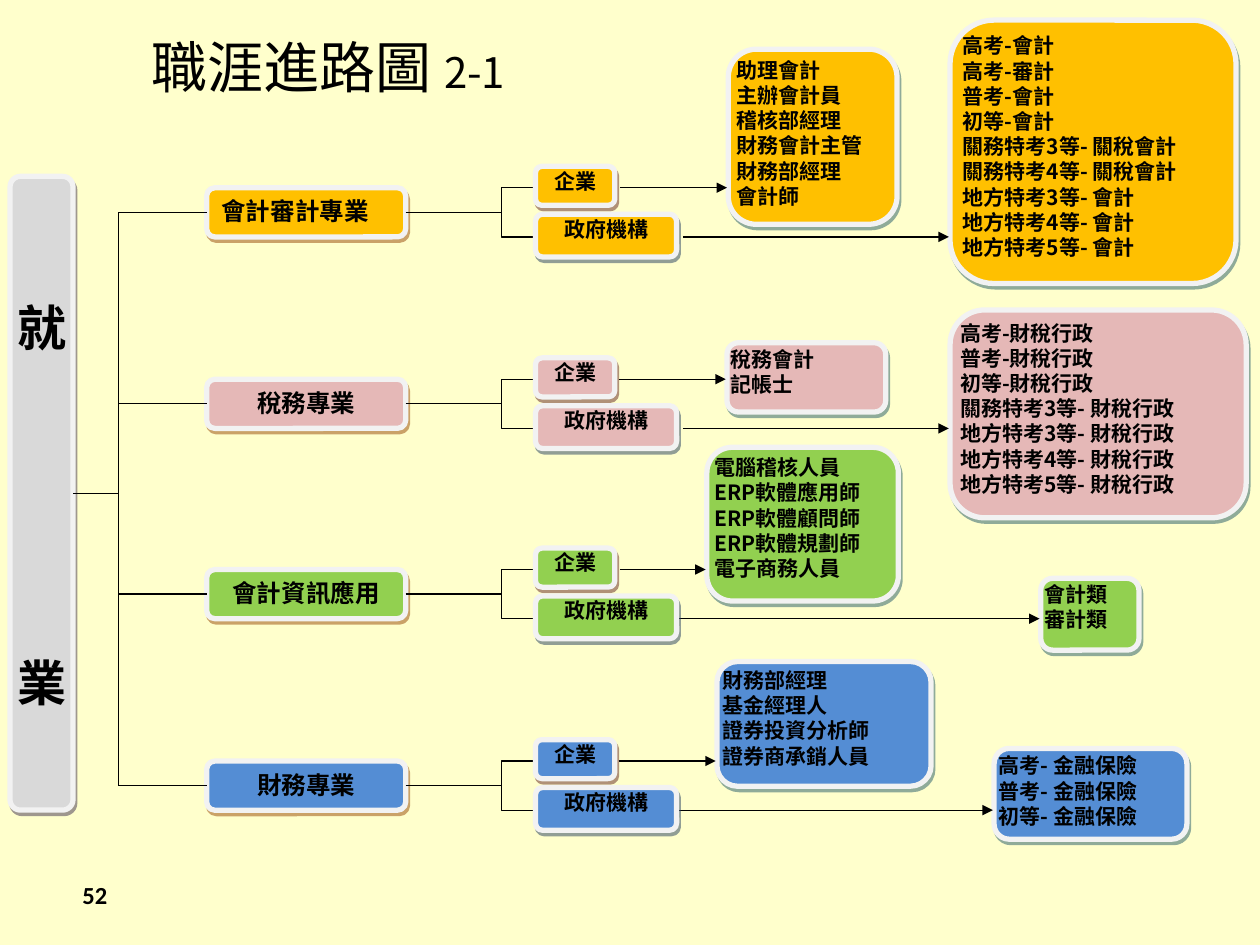
from dataclasses import dataclass

from lxml import etree
from pptx import Presentation
from pptx.dml.color import RGBColor
from pptx.enum.shapes import MSO_CONNECTOR, MSO_SHAPE
from pptx.enum.text import MSO_ANCHOR, PP_ALIGN
from pptx.oxml.ns import qn
from pptx.util import Pt

PX = 9144  # 100 px to the inch
ROUNDED = MSO_SHAPE.ROUNDED_RECTANGLE
STRAIGHT, ELBOW = MSO_CONNECTOR.STRAIGHT, MSO_CONNECTOR.ELBOW
LEFT, CENTER, RIGHT = PP_ALIGN.LEFT, PP_ALIGN.CENTER, PP_ALIGN.RIGHT
TOP, MIDDLE = MSO_ANCHOR.TOP, MSO_ANCHOR.MIDDLE
LEFT_SIDE, RIGHT_SIDE = 1, 3


@dataclass(frozen=True)
class Theme:
    font: str = "Noto Sans CJK SC"
    number_font: str = "Calibri"
    background: str = "FFFFCC"
    ink: str = "000000"
    border: str = "F2F2F2"
    root: str = "D9D9D9"
    gold: str = "FFC000"
    pink: str = "E5B8B7"
    green: str = "92D050"
    blue: str = "548DD4"
    root_shadow: str = "3F3151"
    field_shadow: str = "974706"
    company_shadow: str = "622423"
    agency_shadow: str = "243F60"
    jobs_shadow: str = "205867"
    title_size: int = 32
    part_size: int = 24
    root_size: int = 28
    field_size: int = 14
    body_size: int = 12
    line_height: float = 1.2


THEME = Theme()
PITCH = 455 / 3
FIRST_TRACK = (164, 149)
ROOT_BOX = (8, 140, 50, 503)
SPINE_X = 94

# field, alignment, fill, then (arrow start, box, lines) for company and agency
TRACKS = [
    ("會計審計專業", LEFT, THEME.gold,
     (492, (578, 39, 134, 139),
      ["助理會計", "主辦會計員", "稽核部經理", "財務會計主管", "財務部經理", "會計師"]),
     (542, (754, 16, 227, 209),
      ["高考-會計", "高考-審計", "普考-會計", "初等-會計",
       "關務特考3等- 關稅會計", "關務特考4等- 關稅會計",
       "地方特考3等- 會計", "地方特考4等- 會計", "地方特考5等- 會計"])),
    ("稅務專業", CENTER, THEME.pink,
     (491, (577, 272, 126, 55), ["稅務會計", "記帳士"]),
     (542, (754, 246, 235, 165),
      ["高考-財稅行政", "普考-財稅行政", "初等-財稅行政", "關務特考3等- 財稅行政",
       "地方特考3等- 財稅行政", "地方特考4等- 財稅行政", "地方特考5等- 財稅行政"])),
    ("會計資訊應用", CENTER, THEME.green,
     (492, (561, 355, 152, 122),
      ["電腦稽核人員", "ERP軟體應用師", "ERP軟體顧問師", "ERP軟體規劃師", "電子商務人員"]),
     (539, (826, 459, 78, 57), ["會計類", "審計類"])),
    ("財務專業", CENTER, THEME.blue,
     (491, (569, 525, 170, 99),
      ["財務部經理", "基金經理人", "證券投資分析師", "證券商承銷人員"]),
     (539, (789, 594, 153, 72), ["高考- 金融保險", "普考- 金融保險", "初等- 金融保險"])),
]


def emu(*lengths):
    return [round(length * PX) for length in lengths]


def format_paragraph(paragraph, size, align, bold=True, name=THEME.font):
    paragraph.alignment = align
    paragraph.line_spacing = Pt(size * THEME.line_height)
    font = paragraph.font
    font.name, font.size, font.bold = name, Pt(size), bold
    font.color.rgb = RGBColor.from_string(THEME.ink)
    east_asian = etree.Element(qn("a:ea"), typeface=name)
    font._element.find(qn("a:latin")).addnext(east_asian)


def write_lines(frame, lines, size, align, inset=(0, 0), anchor=TOP):
    """Fill a text frame; inset is (sides, top and bottom) in px."""
    frame.word_wrap = True
    frame.vertical_anchor = anchor
    frame.margin_left = frame.margin_right = inset[0] * PX
    frame.margin_top = frame.margin_bottom = inset[1] * PX
    for index, line in enumerate(lines):
        paragraph = frame.add_paragraph() if index else frame.paragraphs[0]
        paragraph.text = line
        format_paragraph(paragraph, size, align)


def cast_shadow(shape, color):
    shape.shadow.inherit = False
    effects = shape._element.spPr.find(qn("a:effectLst"))
    shadow = etree.SubElement(effects, qn("a:outerShdw"), blurRad="0", dist="28000",
                              dir="3800000", algn="ctr", rotWithShape="0")
    tint = etree.SubElement(shadow, qn("a:srgbClr"), val=color)
    etree.SubElement(tint, qn("a:alpha"), val="50000")


def add_card(slide, box, fill, shadow, lines, size=THEME.body_size, align=LEFT, inset=(0, 0)):
    card = slide.shapes.add_shape(ROUNDED, *emu(*box))
    card.fill.solid()
    card.fill.fore_color.rgb = RGBColor.from_string(fill)
    card.line.color.rgb = RGBColor.from_string(THEME.border)
    card.line.width = Pt(3)
    cast_shadow(card, shadow)
    write_lines(card.text_frame, lines, size, align, inset)
    return card


def add_line(slide, start, end, kind=STRAIGHT, arrow=False):
    line = slide.shapes.add_connector(kind, *emu(*start, *end))
    line.line.color.rgb = RGBColor.from_string(THEME.ink)
    line.line.width = Pt(0.75)
    if arrow:
        etree.SubElement(line.line._get_or_add_ln(), qn("a:tailEnd"), type="triangle")
    etree.SubElement(line._element.spPr, qn("a:effectLst"))
    return line


def add_title(slide, box):
    title = slide.shapes.title
    title.left, title.top, title.width, title.height = emu(*box)
    frame = title.text_frame
    frame.vertical_anchor = MIDDLE
    paragraph = frame.paragraphs[0]
    for text, size in (("職涯進路圖 ", THEME.title_size), ("2-1", THEME.part_size)):
        run = paragraph.add_run()
        run.text = text
        run.font.size = Pt(size)
    format_paragraph(paragraph, THEME.title_size, CENTER, bold=False)


def add_page_number(slide, box):
    number = slide.shapes.add_textbox(*emu(*box))
    write_lines(number.text_frame, [], THEME.field_size, RIGHT, (10, 5), MIDDLE)
    paragraph = number.text_frame.paragraphs[0]
    paragraph.text = "52"
    format_paragraph(paragraph, THEME.field_size, RIGHT, name=THEME.number_font)


def add_root(slide, box):
    """Place the employment bar and the spine that feeds every track."""
    root = add_card(slide, box, THEME.root, THEME.root_shadow, ["就", "業"],
                    THEME.root_size, CENTER)
    root.text_frame.margin_top = 94 * PX
    root.text_frame.paragraphs[1].space_before = Pt(169)
    x, y, width, height = box
    middle = y + height / 2
    trunk = add_line(slide, (x + width, middle), (SPINE_X, middle))
    trunk.begin_connect(root, RIGHT_SIDE)
    spine_top = FIRST_TRACK[1] + 20
    add_line(slide, (SPINE_X, spine_top), (SPINE_X, spine_top + 3 * PITCH))


def add_track(slide, origin, track):
    """Place one field, its two kinds of employer and the posts each leads to."""
    name, align, fill, company, agency = track
    x, y = origin
    middle = y + 19.5
    fork_x, employer_x = x + 207, x + 261
    field = add_card(slide, (x, y, 158, 39), fill, THEME.field_shadow, [name],
                     THEME.field_size, align, (10, 5))
    add_line(slide, (SPINE_X, middle), (x, middle)).end_connect(field, LEFT_SIDE)
    add_line(slide, (x + 158, middle), (fork_x, middle)).begin_connect(field, RIGHT_SIDE)

    employers = (
        ("企業", y, (-17, 63, 31), THEME.company_shadow, company),
        ("政府機構", y + 39, (21, 112, 34), THEME.agency_shadow, agency),
    )
    for employer, line_y, (drop, width, height), shadow, posts in employers:
        arrow_x, posts_box, lines = posts
        add_card(slide, posts_box, fill, THEME.jobs_shadow, lines)
        add_line(slide, (fork_x, middle), (employer_x, line_y), ELBOW)
        add_line(slide, (arrow_x, line_y), (posts_box[0] - 1, line_y), arrow=True)
        add_card(slide, (employer_x, y + drop, width, height), fill, shadow,
                 [employer], align=CENTER)


def main():
    deck = Presentation()
    deck.slide_width, deck.slide_height = emu(1000, 750)
    slide = deck.slides.add_slide(deck.slide_layouts[5])
    slide.background.fill.solid()
    slide.background.fill.fore_color.rgb = RGBColor.from_string(THEME.background)
    add_title(slide, (28, 29, 465, 47))
    add_root(slide, ROOT_BOX)
    x, y = FIRST_TRACK
    for index, track in enumerate(TRACKS):
        add_track(slide, (x, round(y + index * PITCH)), track)
    add_page_number(slide, (20, 690, 75, 40))
    deck.save("out.pptx")


if __name__ == "__main__":
    main()
